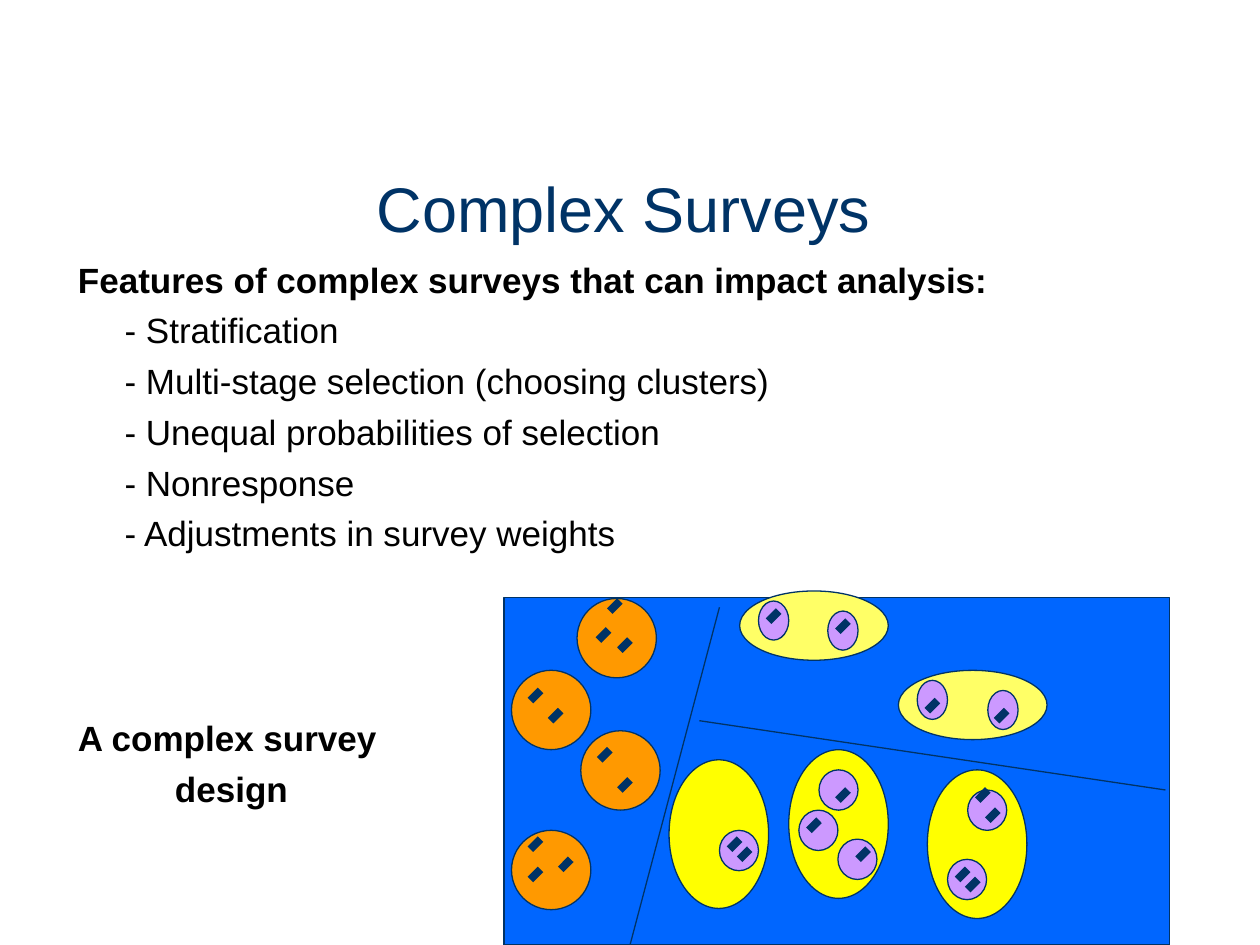
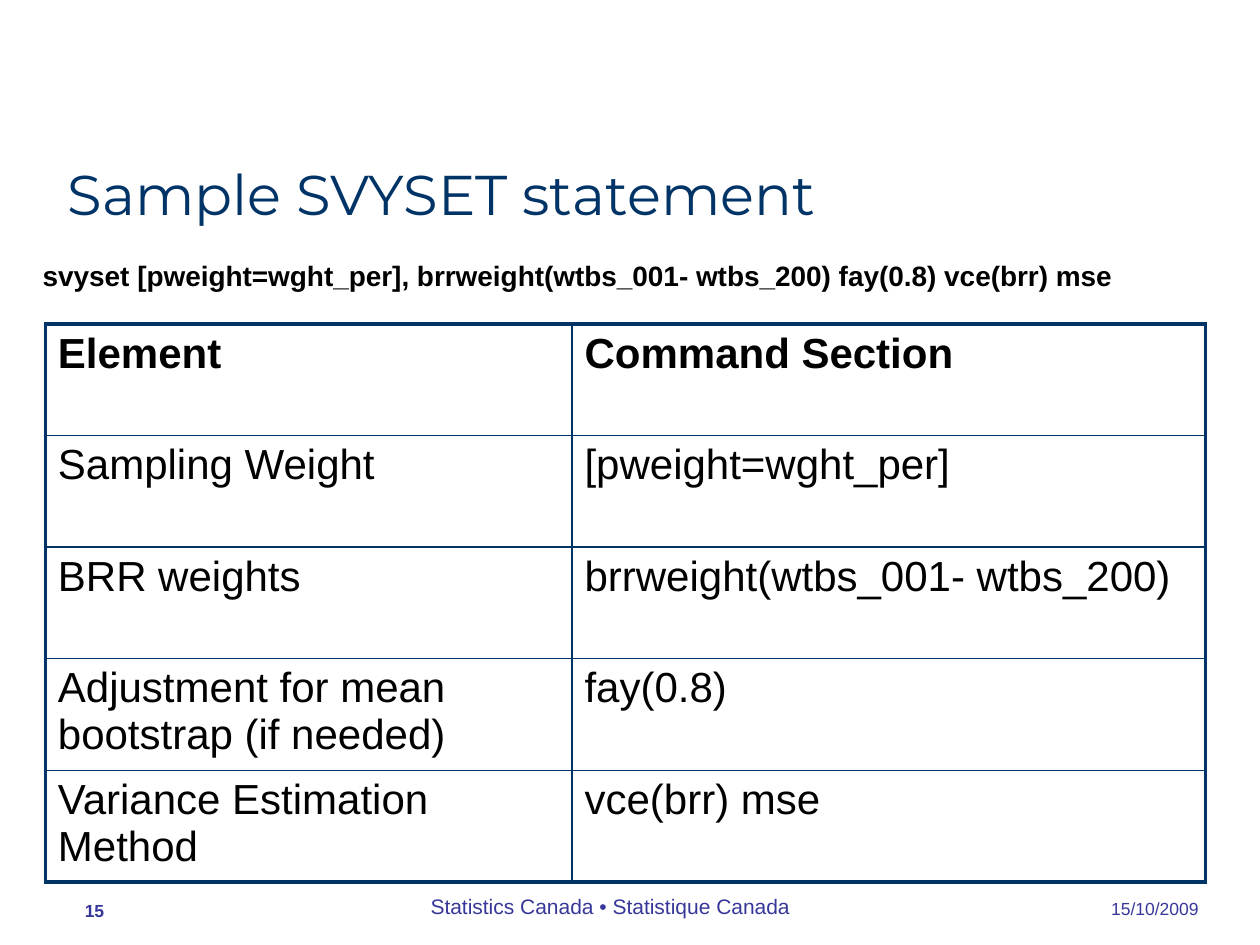
from dataclasses import dataclass

from lxml import etree
from pptx import Presentation
from pptx.dml.color import RGBColor
from pptx.enum.shapes import MSO_CONNECTOR, MSO_SHAPE
from pptx.enum.text import MSO_ANCHOR, PP_ALIGN
from pptx.oxml.ns import qn
from pptx.util import Inches, Pt

OVAL = MSO_SHAPE.OVAL
RECTANGLE = MSO_SHAPE.RECTANGLE
ROUNDED = MSO_SHAPE.ROUNDED_RECTANGLE
STRAIGHT = MSO_CONNECTOR.STRAIGHT
TOP = MSO_ANCHOR.TOP
BOTTOM = MSO_ANCHOR.BOTTOM
LEFT = PP_ALIGN.LEFT
CENTER = PP_ALIGN.CENTER
RIGHT = PP_ALIGN.RIGHT


@dataclass(frozen=True)
class Theme:
    navy: str = "003366"
    black: str = "000000"
    footer: str = "373799"
    population: str = "0066FF"
    orange: str = "FF9900"
    yellow: str = "FFFF00"
    pale_yellow: str = "FFFF66"
    lilac: str = "CC99FF"
    font: str = "Arial"
    display_font: str = "Montserrat"
    title_size: int = 36
    display_size: int = 32
    table_size: int = 24
    body_size: int = 20
    command_size: int = 16
    footer_size: int = 12
    small_size: int = 10
    paragraph_gap: int = 5
    caption_gap: int = 93
    thin: float = 0.75
    inner_border: float = 1
    outer_border: float = 2.25
    unit_width: float = 4.5


THEME = Theme()

FEATURES = [
    "- Stratification",
    "- Multi-stage selection (choosing clusters)",
    "- Unequal probabilities of selection",
    "- Nonresponse",
    "- Adjustments in survey weights",
]

STRATUM_BOUNDARIES = [((5.71, 4.82), (5, 7.5)), ((5.55, 5.72), (9.25, 6.27))]

CLUSTER_GROUPS = [
    (THEME.yellow, (0.79, 1.18), [(5.31, 6.03), (6.26, 5.95), (7.36, 6.11)]),
    (THEME.pale_yellow, (1.18, 0.55), [(5.87, 4.69), (7.13, 5.32)]),
    (THEME.orange, (0.63, 0.63),
     [(4.58, 4.75), (4.06, 5.32), (4.61, 5.8), (4.06, 6.59)]),
    (THEME.lilac, (0.31, 0.32),
     [(5.71, 6.59), (6.5, 6.11), (6.34, 6.43), (6.65, 6.66),
      (7.68, 6.27), (7.52, 6.82)]),
    (THEME.lilac, (0.24, 0.31),
     [(6.02, 4.77), (6.57, 4.85), (7.28, 5.4), (7.84, 5.48)]),
]

UNIT_STEP = 0.08
SAMPLED_UNITS = [
    (5.79, 6.74), (5.87, 6.82), (6.42, 6.59), (6.81, 6.82), (7.76, 6.35),
    (6.65, 6.35), (7.68, 7.06), (7.84, 6.51), (7.6, 6.98), (6.1, 4.93),
    (6.65, 5.01), (7.91, 5.72), (7.36, 5.64), (4.84, 4.85), (4.92, 5.16),
    (4.75, 5.08), (4.76, 6.03), (4.92, 6.27), (4.21, 5.56), (4.37, 5.72),
    (4.21, 6.74), (4.21, 6.98), (4.45, 6.9),
]

COMMAND = "svyset [pweight=wght_per], brrweight(wtbs_001- wtbs_200) fay(0.8) vce(brr) mse"
COMMAND_PARTS = [
    ("Element", "Command Section"),
    ("Sampling Weight", "[pweight=wght_per]"),
    ("BRR weights", "brrweight(wtbs_001- wtbs_200)"),
    ("Adjustment for mean bootstrap (if needed)", "fay(0.8)"),
    ("Variance Estimation Method", "vce(brr) mse"),
]


def rgb(color):
    return RGBColor.from_string(color)


def add_run(paragraph, text, size, color=THEME.black, bold=False, font=THEME.font):
    run = paragraph.add_run()
    run.text = text
    run.font.name = font
    run.font.size = Pt(size)
    run.font.bold = bold
    run.font.color.rgb = rgb(color)


def add_frame(slide, box, anchor=TOP):
    frame = slide.shapes.add_textbox(*map(Inches, box)).text_frame
    frame.word_wrap = True
    frame.vertical_anchor = anchor
    return frame


def add_text(slide, box, text, size, align=LEFT, anchor=TOP, **style):
    paragraph = add_frame(slide, box, anchor).paragraphs[0]
    paragraph.alignment = align
    add_run(paragraph, text, size, **style)


def add_title(slide, box, text, size, align=LEFT, **style):
    title = slide.shapes.add_shape(ROUNDED, *map(Inches, box))
    title.adjustments[0] = 0.22
    title.shadow.inherit = False
    title.fill.background()
    title.line.fill.background()
    frame = title.text_frame
    frame.word_wrap = True
    frame.vertical_anchor = BOTTOM
    frame.margin_left = frame.margin_right = Inches(0.05)
    frame.margin_top = frame.margin_bottom = 0
    paragraph = frame.paragraphs[0]
    paragraph.alignment = align
    add_run(paragraph, text, size, color=THEME.navy, **style)


def add_body(slide, box, lines):
    frame = add_frame(slide, box)
    for index, (text, indent, gap, bold) in enumerate(lines):
        paragraph = frame.add_paragraph() if index else frame.paragraphs[0]
        paragraph._p.get_or_add_pPr().set("marL", str(Inches(indent)))
        if index:
            paragraph.space_before = Pt(gap)
        add_run(paragraph, text, THEME.body_size, bold=bold)


def add_outlined(slide, kind, box, color):
    shape = slide.shapes.add_shape(kind, *map(Inches, box))
    shape.shadow.inherit = False
    shape.fill.solid()
    shape.fill.fore_color.rgb = rgb(color)
    shape.line.color.rgb = rgb(THEME.navy)
    shape.line.width = Pt(THEME.thin)


def add_line(slide, start, end, width):
    line = slide.shapes.add_connector(STRAIGHT, *map(Inches, (*start, *end)))
    line.line.color.rgb = rgb(THEME.navy)
    line.line.width = Pt(width)
    etree.SubElement(line._element.spPr, qn("a:effectLst"))


def set_borders(cell, outer_sides):
    properties = cell._tc.get_or_add_tcPr()
    for side in "LRTB":
        width = THEME.outer_border if side in outer_sides else THEME.inner_border
        border = etree.SubElement(properties, qn(f"a:ln{side}"), w=str(Pt(width)))
        fill = etree.SubElement(border, qn("a:solidFill"))
        etree.SubElement(fill, qn("a:srgbClr"), val=THEME.navy)


def add_command_table(slide, box, column_widths, rows):
    last_row, last_column = len(rows) - 1, len(column_widths) - 1
    table = slide.shapes.add_table(
        len(rows), len(column_widths), *map(Inches, box)).table
    table.first_row = False
    table.horz_banding = False
    for column, width in zip(table.columns, column_widths):
        column.width = Inches(width)
    for r, texts in enumerate(rows):
        for c, text in enumerate(texts):
            cell = table.cell(r, c)
            edges = {"L": c == 0, "R": c == last_column,
                     "T": r == 0, "B": r == last_row}
            set_borders(cell, [side for side, outer in edges.items() if outer])
            cell.fill.background()
            cell.margin_bottom = Inches(0.02)
            add_run(cell.text_frame.paragraphs[0], text,
                    THEME.table_size, bold=r == 0)


def add_footer(slide, number, organisation, date):
    add_text(slide, (8.46, 6.82, 1.15, 0.52), date, THEME.small_size,
             RIGHT, BOTTOM, color=THEME.footer)
    add_text(slide, (0.43, 6.83, 0.64, 0.53), number, THEME.small_size,
             CENTER, BOTTOM, color=THEME.footer, bold=True)
    add_text(slide, (1.54, 6.82, 6.61, 0.52), organisation, THEME.footer_size,
             CENTER, BOTTOM, color=THEME.footer)


def add_survey_design(slide):
    add_outlined(slide, RECTANGLE, (4, 4.74, 5.28, 2.76), THEME.population)
    for start, end in STRATUM_BOUNDARIES:
        add_line(slide, start, end, THEME.thin)
    for color, size, corners in CLUSTER_GROUPS:
        for corner in corners:
            add_outlined(slide, OVAL, (*corner, *size), color)
    for x, y in SAMPLED_UNITS:
        add_line(slide, (x, y), (x + UNIT_STEP, y - UNIT_STEP), THEME.unit_width)


def build_complex_surveys(slide):
    add_title(slide, (0.38, 0.88, 9.14, 1.14), "Complex Surveys",
              THEME.title_size, CENTER)
    gap = THEME.paragraph_gap
    add_body(slide, (0.52, 2, 9.05, 3.78), [
        ("Features of complex surveys that can impact analysis:", 0, 0, True),
        *((feature, 0.37, gap, False) for feature in FEATURES),
        ("A complex survey", 0, THEME.caption_gap, True),
        ("design", 0.77, gap, True),
    ])
    add_survey_design(slide)


def build_svyset(slide):
    add_title(slide, (0.44, 1.08, 9.14, 0.77), "Sample SVYSET statement",
              THEME.display_size, font=THEME.display_font)
    add_text(slide, (0.24, 2, 9.33, 0.65), COMMAND, THEME.command_size, bold=True)
    add_footer(slide, "15", "Statistics Canada • Statistique Canada", "15/10/2009")
    add_command_table(slide, (0.36, 2.57, 9.21, 4.43), (4.18, 5.03), COMMAND_PARTS)


def main():
    deck = Presentation()
    deck.slide_width, deck.slide_height = Inches(10), Inches(7.5)
    blank = deck.slide_layouts[6]
    for build in (build_complex_surveys, build_svyset):
        build(deck.slides.add_slide(blank))
    deck.save("out.pptx")


if __name__ == "__main__":
    main()
